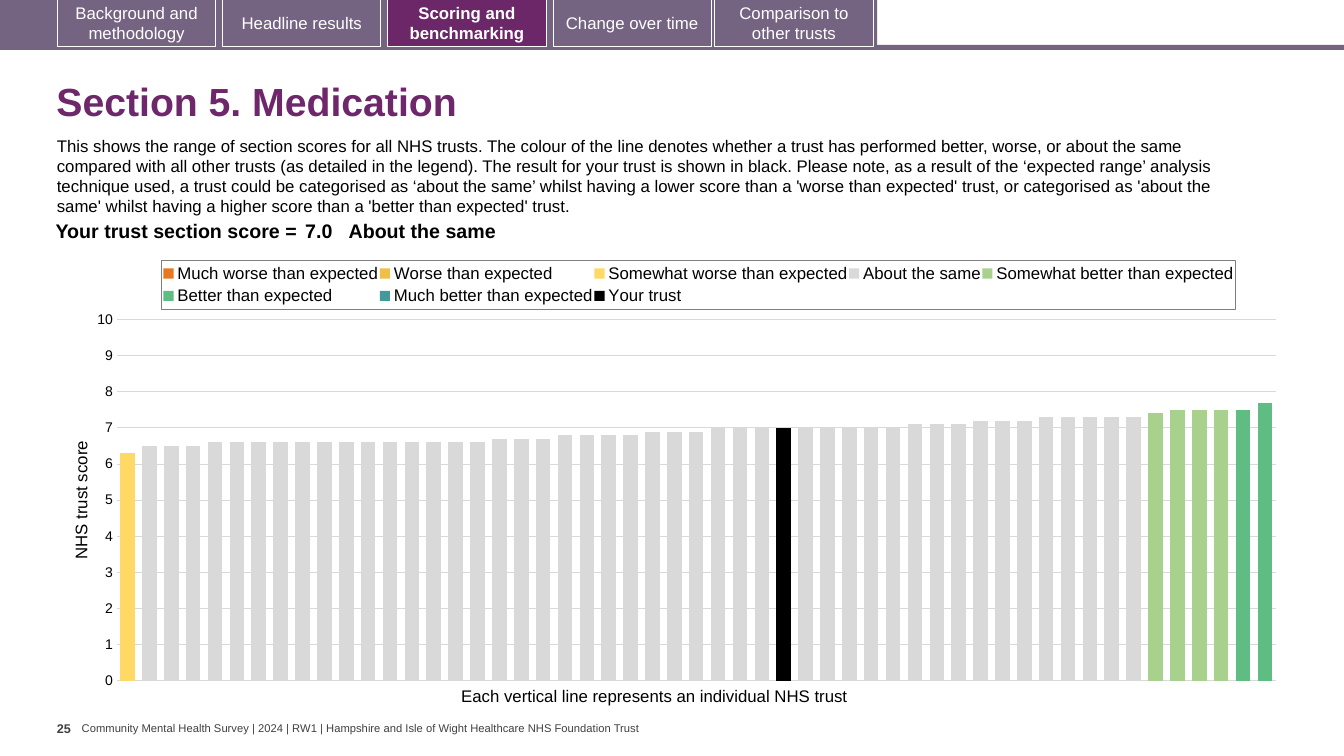
import copy
import typing

import lxml.etree
import pptx
import pptx.chart.data
import pptx.dml.color
import pptx.enum.chart
import pptx.enum.shapes
import pptx.enum.text
import pptx.oxml
import pptx.oxml.ns
import pptx.util

ALIGN, ANCHOR = pptx.enum.text.PP_ALIGN, pptx.enum.text.MSO_ANCHOR
qn = pptx.oxml.ns.qn

class Theme(typing.NamedTuple):
    font: str = "Arial"
    purple: str = "6D276A"
    active: str = "6B2768"
    band: str = "756382"
    white: str = "FFFFFF"
    black: str = "000000"
    grey: str = "404040"
    grid: str = "D9D9D9"
    frame: str = "7F7F7F"
    title: float = 28
    score: float = 14
    body: float = 12
    axis: float = 10
    number: float = 9
    footer: float = 8

class Area(typing.NamedTuple):
    left: float
    top: float
    width: float
    height: float

class Label(typing.NamedTuple):
    area: Area
    text: str
    size: float
    color: str
    bold: bool = False
    wrap: bool = False
    inset: float = 0.1
    anchor: typing.Any = ANCHOR.TOP

class Rating(typing.NamedTuple):
    name: str
    color: str
    start: int = 0
    runs: tuple[tuple[float, int], ...] = ()

THEME = Theme()
WIDTH, HEIGHT = pptx.util.Inches(13.33), pptx.util.Inches(7.5)
TRUSTS = 53
TAB_LEFT, TAB_PITCH, LAST_TAB_LEFT = 4.28, 12.29, 53.19
TABS = ["Background and methodology", "Headline results", "Scoring and benchmarking",
        "Change over time", "Comparison to other trusts"]
ACTIVE_TAB = 2
RATINGS = [
    Rating("Much worse than expected", "E87722"),
    Rating("Worse than expected", "F1BE48"),
    Rating("Somewhat worse than expected", "FFD966", 0, ((6.3, 1),)),
    Rating("About the same", "D9D9D9", 1, (
        (6.5, 3), (6.6, 13), (6.7, 3), (6.8, 4), (6.9, 3), (7, 9), (7.1, 3), (7.2, 3), (7.3, 5))),
    Rating("Somewhat better than expected", "A9D18E", 47, ((7.4, 1), (7.5, 3))),
    Rating("Better than expected", "5FBD83", 51, ((7.5, 1), (7.7, 1))),
    Rating("Much better than expected", "419999"),
    Rating("Your trust", "000000", 30, ((7, 1),)),
]
INTRO = (
    "This shows the range of section scores for all NHS trusts. The colour of the line denotes whether a trust has "
    "performed better, worse, or about the same compared with all other trusts (as detailed in the legend). The result "
    "for your trust is shown in black. Please note, as a result of the ‘expected range’ analysis technique used, a trust "
    "could be categorised as ‘about the same’ whilst having a lower score than a 'worse than expected' trust, or "
    "categorised as 'about the same' whilst having a higher score than a 'better than expected' trust.")
LABELS = [
    Label(Area(6.08, 95.5, 42.01, 1.73),
          "Community Mental Health Survey | 2024 | RW1 | Hampshire and Isle of Wight Healthcare NHS Foundation Trust",
          THEME.footer, THEME.grey, inset=0, anchor=ANCHOR.MIDDLE),
    Label(Area(4.23, 94.67, 1.88, 5.33), "25", THEME.number, THEME.grey, bold=True, inset=0),
    Label(Area(3.49, 17.27, 91, 12.13), INTRO, THEME.body, THEME.black, wrap=True),
    Label(Area(33.58, 90, 30.83, 4), "Each vertical line represents an individual NHS trust", THEME.body, THEME.black),
]
SCORE_CELLS = [("Your trust section score =", 19.73, 0.04, ALIGN.RIGHT), ("7.0", 3.53, 0.04, ALIGN.LEFT),
               ("About the same", 64.44, 0, ALIGN.LEFT)]

def color(code: str) -> pptx.dml.color.RGBColor:
    return pptx.dml.color.RGBColor.from_string(code)

def place(area: Area) -> list[int]:
    return [round(side * share / 100) for side, share in zip((WIDTH, HEIGHT) * 2, area)]

def style(font: typing.Any, size: float, code: str, bold: bool = False) -> None:
    font.name, font.size, font.bold = THEME.font, pptx.util.Pt(size), bold
    font.color.rgb = color(code)

def write(para: typing.Any, text: str, size: float, code: str, bold: bool = False) -> None:
    span = para.add_run()
    span.text = text
    style(span.font, size, code, bold)

def add_block(page: typing.Any, area: Area, fill: str) -> typing.Any:
    block = page.shapes.add_shape(pptx.enum.shapes.MSO_SHAPE.RECTANGLE, *place(area))
    block.shadow.inherit = False
    block.fill.solid()
    block.fill.fore_color.rgb = color(fill)
    block.line.fill.background()
    return block

def add_tab(page: typing.Any, text: str, left: float, active: bool) -> None:
    block = add_block(page, Area(left, -0.13, 11.78, 6.27), THEME.active if active else THEME.band)
    block.line.color.rgb = color(THEME.white)
    block.line.width = pptx.util.Pt(0.75)
    block.text_frame.word_wrap = True
    block.text_frame.vertical_anchor = ANCHOR.MIDDLE
    block.text_frame.paragraphs[0].alignment = ALIGN.CENTER
    write(block.text_frame.paragraphs[0], text, THEME.body, THEME.white, active)

def add_label(page: typing.Any, label: Label) -> None:
    frame = page.shapes.add_textbox(*place(label.area)).text_frame
    frame.word_wrap, frame.vertical_anchor = label.wrap, label.anchor
    frame.margin_left = frame.margin_right = pptx.util.Inches(label.inset)
    if label.anchor == ANCHOR.MIDDLE:
        frame.margin_top = frame.margin_bottom = 0
    write(frame.paragraphs[0], label.text, label.size, label.color, label.bold)

def add_title(page: typing.Any, text: str) -> None:
    title = page.shapes.title
    title.left, title.top, title.width, title.height = place(Area(3.45, 8.93, 93.7, 9.6))
    title.text_frame.auto_size = pptx.enum.text.MSO_AUTO_SIZE.NONE
    title.text_frame.vertical_anchor = ANCHOR.MIDDLE
    para = title.text_frame.paragraphs[0]
    para.alignment, para.line_spacing = ALIGN.LEFT, 0.9
    write(para, text, THEME.title, THEME.purple, True)

def add_score(page: typing.Any) -> None:
    table = page.shapes.add_table(1, len(SCORE_CELLS), *place(Area(2.68, 28.67, 87.7, 4.13))).table
    table.first_row = table.horz_banding = False
    for index, (text, share, inset, alignment) in enumerate(SCORE_CELLS):
        table.columns[index].width = round(WIDTH * share / 100)
        cell = table.cell(0, index)
        cell.fill.background()
        cell.margin_left = cell.margin_right = pptx.util.Inches(inset)
        cell.margin_top = cell.margin_bottom = pptx.util.Inches(0.04)
        cell.text_frame.paragraphs[0].alignment = alignment
        write(cell.text_frame.paragraphs[0], text, THEME.score, THEME.black, True)

def set_layout(parent: typing.Any, position: int, shares: Area, inner: bool = False) -> None:
    for old in parent.findall(qn("c:layout")):
        parent.remove(old)
    layout = lxml.etree.Element(qn("c:layout"))
    manual = lxml.etree.SubElement(layout, qn("c:manualLayout"))
    values = [("layoutTarget", "inner")] * inner + [("xMode", "edge"), ("yMode", "edge"), *zip("xywh", shares)]
    for tag, value in values:
        lxml.etree.SubElement(manual, qn(f"c:{tag}")).set("val", str(value))
    parent.insert(position, layout)

def scores(rating: Rating) -> list[float | None]:
    known = [value for value, count in rating.runs for _ in range(count)]
    return [None] * rating.start + known + [None] * (TRUSTS - rating.start - len(known))

def add_legend(chart: typing.Any) -> None:
    chart.has_legend = True
    legend = chart.legend
    legend.position = pptx.enum.chart.XL_LEGEND_POSITION.TOP
    legend.include_in_layout = False
    style(legend.font, THEME.body, THEME.black)
    set_layout(legend._element, 1, Area(0.077, 0.025, 0.876, 0.11))
    legend._element.find(qn("c:txPr")).addprevious(pptx.oxml.parse_xml(
        f'<c:spPr {pptx.oxml.ns.nsdecls("c", "a")}><a:ln w="9525"><a:solidFill>'
        f'<a:srgbClr val="{THEME.frame}"/></a:solidFill></a:ln></c:spPr>'))

def move_last_series_right(area: typing.Any) -> None:
    bars, category, value = (area.find(qn(f"c:{tag}")) for tag in ("barChart", "catAx", "valAx"))
    right_bars, right_category, right_value = map(copy.deepcopy, (bars, category, value))
    bars.remove(bars.findall(qn("c:ser"))[-1])
    for series in right_bars.findall(qn("c:ser"))[:-1]:
        right_bars.remove(series)
    for tag in ("majorGridlines", "title"):
        right_value.remove(right_value.find(qn(f"c:{tag}")))
    for part, tag, setting in [(right_category, "axId", "501"), (right_category, "crossAx", "502"),
                               (right_value, "axId", "502"), (right_value, "crossAx", "501"),
                               (right_value, "axPos", "r"), (right_value, "crosses", "max"),
                               (right_value, "majorTickMark", "out"), (right_value, "tickLblPos", "none")]:
        part.find(qn(f"c:{tag}")).set("val", setting)
    for link, setting in zip(right_bars.findall(qn("c:axId")), ("501", "502")):
        link.set("val", setting)
    bars.addnext(right_bars)
    value.addnext(right_value)
    right_value.addnext(right_category)

def add_scores_chart(page: typing.Any) -> None:
    data = pptx.chart.data.CategoryChartData()
    data.categories = [str(number) for number in range(1, TRUSTS + 1)]
    for rating in RATINGS:
        data.add_series(rating.name, scores(rating))
    kind = pptx.enum.chart.XL_CHART_TYPE.COLUMN_CLUSTERED
    chart = page.shapes.add_chart(kind, *place(Area(5.03, 32.93, 91.18, 59.15)), data).chart
    chart.has_title = False
    style(chart.font, THEME.axis, THEME.black)
    plot, axis = chart.plots[0], chart.value_axis
    plot.gap_width, plot.overlap, plot.vary_by_categories = 50, 100, False
    for series, rating in zip(plot.series, RATINGS):
        series.invert_if_negative = False
        series.format.fill.solid()
        series.format.fill.fore_color.rgb = color(rating.color)
    chart.category_axis.visible = False
    axis.minimum_scale, axis.maximum_scale, axis.major_unit = 0, 10, 1
    axis.major_tick_mark = pptx.enum.chart.XL_TICK_MARK.NONE
    axis.format.line.fill.background()
    axis.major_gridlines.format.line.color.rgb = color(THEME.grid)
    axis.major_gridlines.format.line.width = pptx.util.Pt(0.75)
    style(axis.tick_labels.font, THEME.axis, THEME.black)
    write(axis.axis_title.text_frame.paragraphs[0], "NHS trust score", THEME.body, THEME.black)
    axis.axis_title._element.find(".//" + qn("a:bodyPr")).set("rot", "-5400000")
    area = chart._chartSpace.chart.plotArea
    set_layout(area, 0, Area(0.04, 0.158, 0.946, 0.808), True)
    move_last_series_right(area)
    add_legend(chart)

def main() -> None:
    deck = pptx.Presentation()
    deck.slide_width, deck.slide_height = WIDTH, HEIGHT
    page = deck.slides.add_slide(deck.slide_layouts[5])
    add_block(page, Area(0, 5.93, 100, 0.67), THEME.band)
    add_block(page, Area(0, 0, 65.27, 6.27), THEME.band)
    for index, text in enumerate(TABS):
        left = LAST_TAB_LEFT if text == TABS[-1] else TAB_LEFT + index * TAB_PITCH
        add_tab(page, text, left, index == ACTIVE_TAB)
    add_title(page, "Section 5. Medication")
    add_scores_chart(page)
    add_score(page)
    for label in LABELS:
        add_label(page, label)
    deck.save("out.pptx")

if __name__ == "__main__":
    main()
